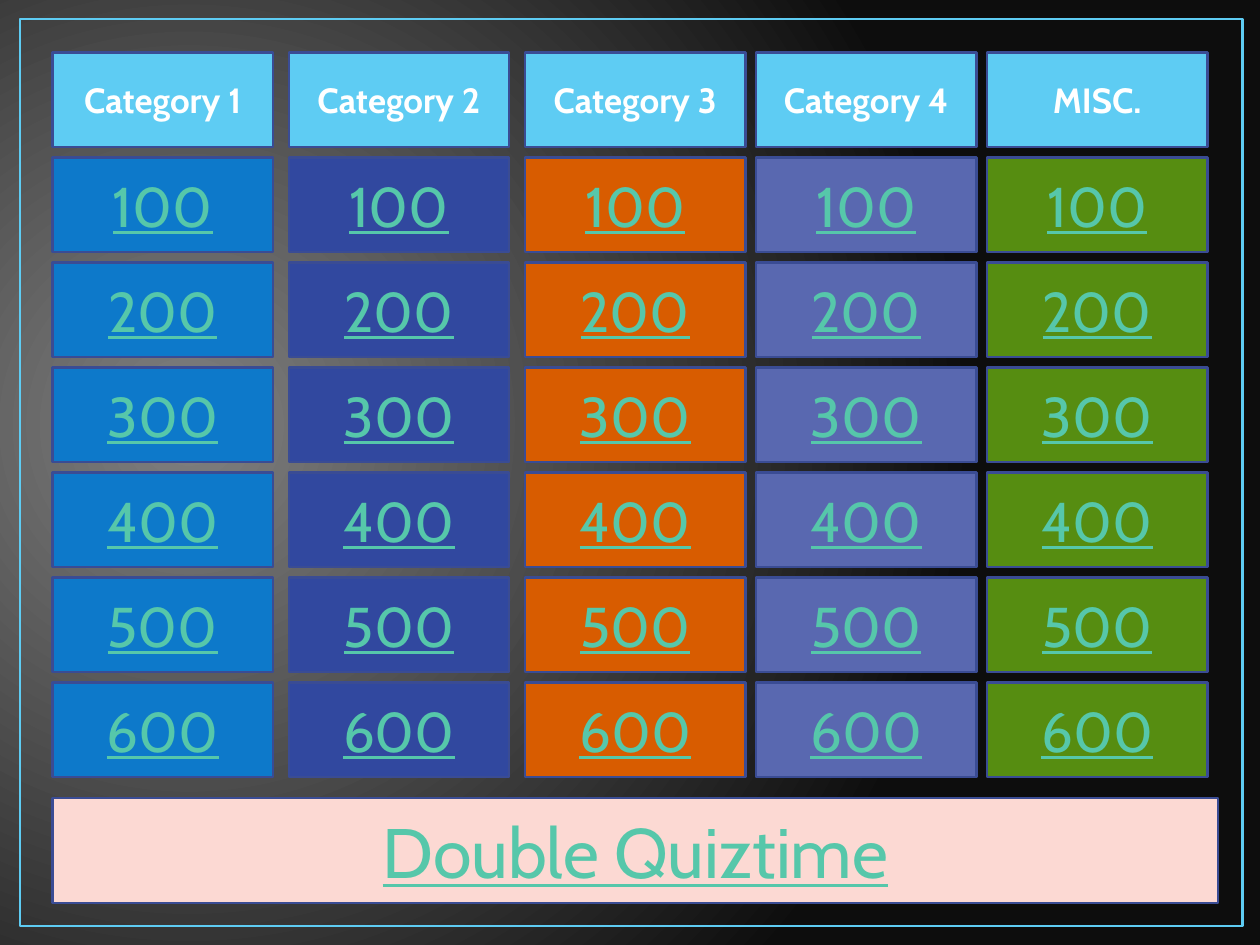
"""Build a quiz board slide with five category columns and a bonus banner."""
from dataclasses import dataclass

from lxml import etree
from pptx import Presentation
from pptx.dml.color import RGBColor
from pptx.enum.shapes import MSO_SHAPE
from pptx.enum.text import MSO_ANCHOR, PP_ALIGN
from pptx.oxml.ns import qn
from pptx.util import Pt

RECTANGLE = MSO_SHAPE.RECTANGLE
MIDDLE = MSO_ANCHOR.MIDDLE
CENTER = PP_ALIGN.CENTER

COLUMNS = [
    ("Category 1", 30, "0D79CA"),
    ("Category 2", 165, "31489F"),
    ("Category 3", 300, "D85C00"),
    ("Category 4", 432, "5968B0"),
    ("MISC.", 564, "568D11"),
]
POINTS = ["100", "200", "300", "400", "500", "600"]
BANNER = "Double Quiztime"

SLIDE_SIZE = (720, 540)
FRAME_BOX = (11.5, 10.8, 698.4, 518.4)
BANNER_BOX = (30, 456, 666, 60)
TILE_WIDTH, TILE_HEIGHT = 126, 54
BOARD_TOP, ROW_STEP = 30, 60


@dataclass(frozen=True)
class Theme:
    font: str = "Cabin"
    glow: str = "808080"
    dark: str = "0D0D0D"
    accent: str = "5ECCF3"
    outline: str = "3A4C94"
    banner: str = "FCD9D3"
    heading: str = "FFFFFF"
    link: str = "56C7AA"
    heading_size: int = 20
    points_size: int = 32
    banner_size: int = 40
    frame_width: float = 1.5
    outline_width: float = 1.25


THEME = Theme()


def paint_background(slide):
    fill = slide.background.fill
    fill.gradient()
    for stop, position, color in zip(fill.gradient_stops, (0, 1), (THEME.glow, THEME.dark)):
        stop.position = position
        stop.color.rgb = RGBColor.from_string(color)
    gradient = next(slide.element.iter(qn("a:gradFill")))
    gradient.remove(gradient.find(qn("a:lin")))
    circle = etree.SubElement(gradient, qn("a:path"), path="circle")
    etree.SubElement(circle, qn("a:fillToRect"), l="15000", t="50000", r="85000", b="60000")


def add_box(slide, box, fill=None, line=THEME.outline, width=THEME.outline_width):
    shape = slide.shapes.add_shape(RECTANGLE, *map(Pt, box))
    shape.shadow.inherit = False
    if fill:
        shape.fill.solid()
        shape.fill.fore_color.rgb = RGBColor.from_string(fill)
    else:
        shape.fill.background()
    shape.line.color.rgb = RGBColor.from_string(line)
    shape.line.width = Pt(width)
    return shape


def write_text(shape, text, size, color=THEME.link, bold=False, underline=True):
    frame = shape.text_frame
    frame.word_wrap = True
    frame.vertical_anchor = MIDDLE
    paragraph = frame.paragraphs[0]
    paragraph.alignment = CENTER
    run = paragraph.add_run()
    run.text = text
    font = run.font
    font.name = THEME.font
    font.size = Pt(size)
    font.bold = bold
    font.underline = underline
    font.color.rgb = RGBColor.from_string(color)


def tile_box(left, row):
    return left, BOARD_TOP + row * ROW_STEP, TILE_WIDTH, TILE_HEIGHT


def main():
    presentation = Presentation()
    presentation.slide_width, presentation.slide_height = map(Pt, SLIDE_SIZE)
    slide = presentation.slides.add_slide(presentation.slide_layouts[6])
    paint_background(slide)
    add_box(slide, FRAME_BOX, line=THEME.accent, width=THEME.frame_width)

    for heading, left, color in COLUMNS:
        header = add_box(slide, tile_box(left, 0), THEME.accent)
        write_text(header, heading, THEME.heading_size, color=THEME.heading,
                   bold=True, underline=False)

    for row, points in enumerate(POINTS, start=1):
        for heading, left, color in COLUMNS:
            tile = add_box(slide, tile_box(left, row), color)
            write_text(tile, points, THEME.points_size)

    banner = add_box(slide, BANNER_BOX, THEME.banner)
    write_text(banner, BANNER, THEME.banner_size)
    presentation.save("out.pptx")


if __name__ == "__main__":
    main()
